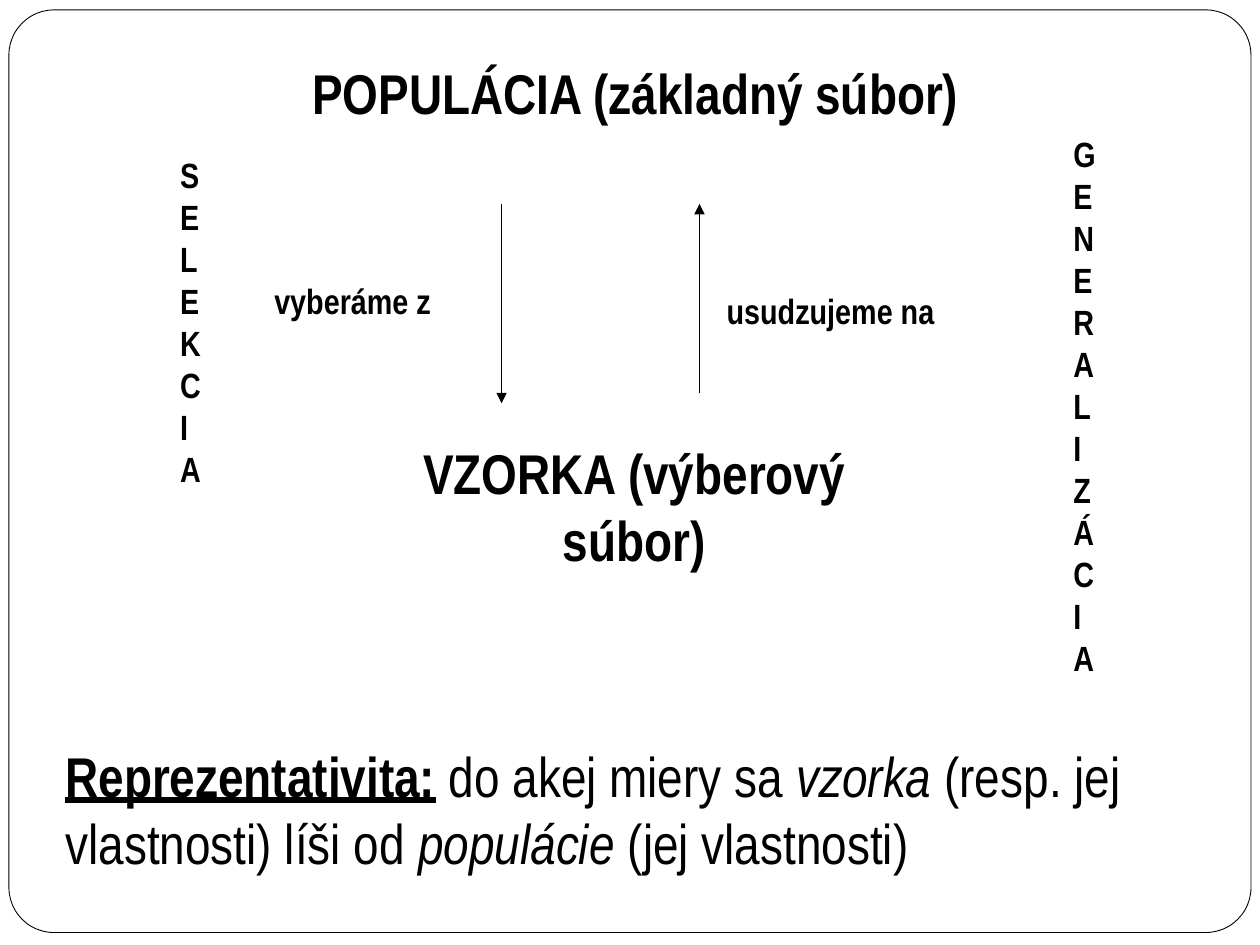
from lxml.etree import SubElement as Sub
from pptx import Presentation
from pptx.dml.color import RGBColor as Rgb
from pptx.enum.shapes import MSO_CONNECTOR as Link, MSO_SHAPE as Kind
from pptx.enum.text import MSO_ANCHOR as Anchor, MSO_AUTO_SIZE as Fit, PP_ALIGN as Align
from pptx.oxml.ns import qn
from pptx.util import Cm, Pt

INK = "000000"
FONT = "Arial Narrow"


def tint(code):
    return Rgb.from_string(code)


def place(shape, box):
    shape.left, shape.top, shape.width, shape.height = map(Cm, box)


def write(shape, runs, size, align=Align.LEFT, anchor=Anchor.TOP, low=0.13):
    frame = shape.text_frame
    frame.word_wrap = True
    frame.auto_size = Fit.NONE
    frame.vertical_anchor = anchor
    frame.margin_left = frame.margin_right = Cm(0.25)
    frame.margin_top, frame.margin_bottom = Cm(0.13), Cm(low)
    par = frame.paragraphs[0]
    par.alignment = align
    for text, style in runs:
        run = par.add_run()
        run.text = text
        font = run.font
        font.name, font.size = FONT, Pt(size)
        font.color.rgb = tint(INK)
        font.bold = "b" in style
        font.italic = "i" in style
        font.underline = "u" in style


def label(slide, box, text, size=20, **look):
    shape = slide.shapes.add_textbox(*map(Cm, box))
    write(shape, [(text, "b")], size, **look)


def border(slide, box):
    shape = slide.shapes.add_shape(Kind.ROUNDED_RECTANGLE, *map(Cm, box))
    shape.adjustments[0] = 0.049
    shape.shadow.inherit = False
    shape.fill.background()
    shape.line.color.rgb = tint(INK)
    shape.line.width = Pt(0.5)


def heading(slide, box):
    title = slide.shapes.title
    place(title, box)
    write(title, [("POPULÁCIA (základný súbor)", "b")], 32, Align.CENTER, Anchor.MIDDLE)


def arrow(slide, x, start, end):
    line = slide.shapes.add_connector(Link.STRAIGHT, Cm(x), Cm(start), Cm(x), Cm(end))
    line.line.color.rgb = tint(INK)
    line.line.width = Pt(0.75)
    Sub(line.line._get_or_add_ln(), qn("a:tailEnd"), type="triangle")
    Sub(line._element.spPr, qn("a:effectLst"))


def exchange(slide, box):
    x, y, wide, high = box
    arrow(slide, x + 4.83, y, y + high)
    arrow(slide, x + 8.82, y + high - 0.2, y)
    label(slide, (x, y + 1.4, 4.45, 1.12), "vyberáme z")
    label(slide, (x + wide - 5.92, y + 1.6, 5.92, 1.12), "usudzujeme na")


def sample(slide, box):
    label(slide, box, "VZORKA (výberový súbor)", 32, align=Align.CENTER, anchor=Anchor.MIDDLE)


def note(slide, box):
    runs = [
        ("Reprezentativita:", "bu"),
        (" do akej miery sa ", ""),
        ("vzorka", "i"),
        (" (resp. jej vlastnosti) líši od ", ""),
        ("populácie", "i"),
        (" (jej vlastnosti)", ""),
    ]
    shape = slide.shapes.add_textbox(*map(Cm, box))
    write(shape, runs, 32, anchor=Anchor.BOTTOM, low=0.25)


def main():
    deck = Presentation()
    deck.slide_width, deck.slide_height = Cm(25.4), Cm(19.05)
    slide = deck.slides.add_slide(deck.slide_layouts[5])
    border(slide, (0.18, 0.2, 25.04, 18.6))
    heading(slide, (4.24, 1.04, 17.15, 1.63))
    label(slide, (3.38, 2.97, 1.07, 7.04), "SELEKCIA")
    exchange(slide, (5.28, 4.11, 15.04, 4.02))
    label(slide, (21.39, 2.54, 0.84, 11.38), "GENERALIZÁCIA")
    sample(slide, (7.19, 8.69, 11.2, 3))
    note(slide, (1.07, 13.28, 23.6, 4.62))
    deck.save("out.pptx")


if __name__ == "__main__":
    main()
